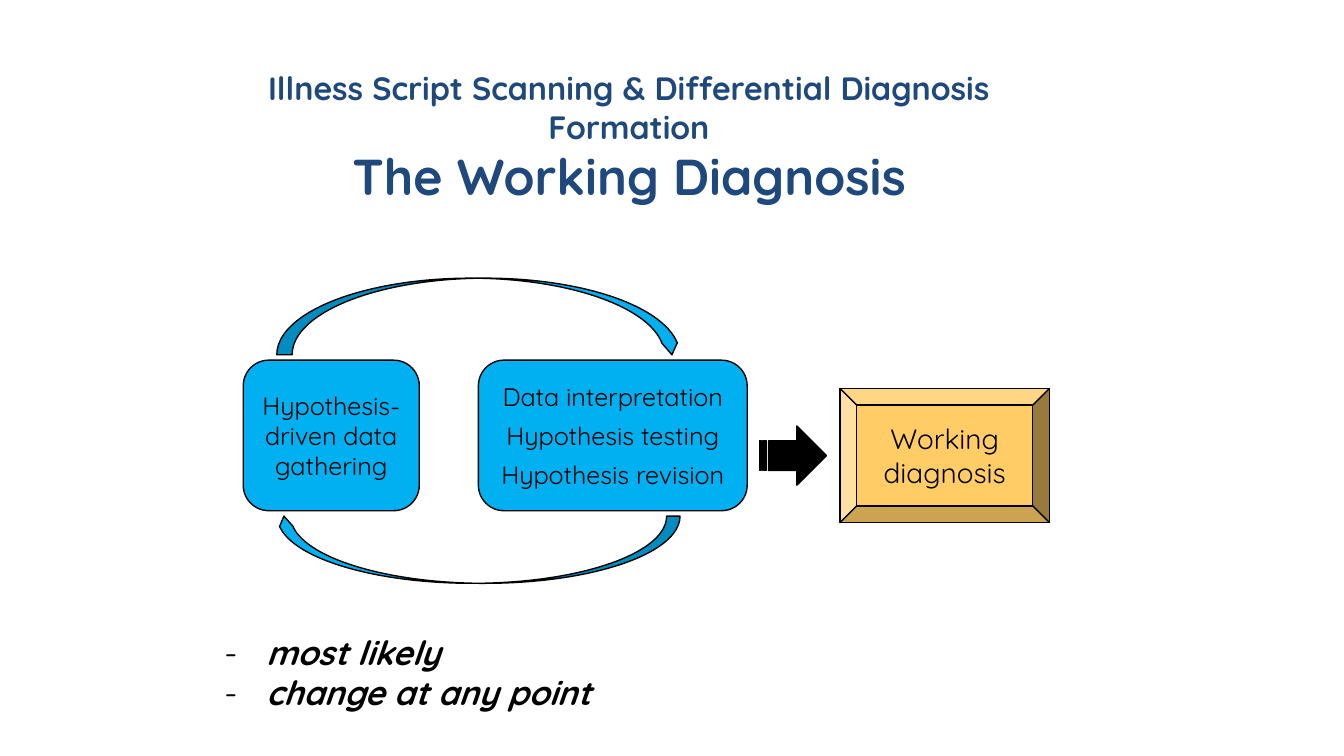
from pptx import Presentation, util as u
from pptx.dml.color import RGBColor
from pptx.enum import shapes, text
from pptx.oxml import parse_xml
from pptx.oxml.ns import nsdecls

FONT = "Quicksand"
BLACK, NAVY, BLUE, GOLD = "000000", "1F497D", "00B0F0", "FFCC66"
KIND = shapes.MSO_SHAPE
MID, TOP = text.MSO_ANCHOR.MIDDLE, text.MSO_ANCHOR.TOP


def color(code):
    return RGBColor.from_string(code)


def place(box):
    return [u.Inches(n) for n in box]


def style(run, size, code=BLACK, bold=False, italic=False):
    font = run.font
    font.name, font.size = FONT, u.Pt(size)
    font.bold, font.italic = bold, italic
    font.color.rgb = color(code)


def setup(frame, anchor):
    frame.word_wrap = True
    frame.vertical_anchor = anchor
    frame.margin_left = frame.margin_right = u.Inches(0.07)
    frame.margin_top = frame.margin_bottom = u.Inches(0.04)


def add_shape(slide, kind, box, fill, adjust=()):
    shape = slide.shapes.add_shape(kind, *place(box))
    shape.shadow.inherit = False
    shape.fill.solid()
    shape.fill.fore_color.rgb = color(fill)
    shape.line.color.rgb = color(BLACK)
    shape.line.width = u.Pt(0.75)
    for i, value in enumerate(adjust):
        shape.adjustments[i] = value
    return shape


def add_step(slide, kind, box, fill, lines, size, adjust):
    """Draw a filled step with one centred paragraph per line."""
    frame = add_shape(slide, kind, box, fill, [adjust]).text_frame
    setup(frame, MID)
    frame.text = "\n".join(lines)
    for i, para in enumerate(frame.paragraphs):
        para.alignment = text.PP_ALIGN.CENTER
        if i:
            para.space_before = u.Pt(4.5)
        style(para.runs[0], size)


def add_title(slide, box):
    frame = slide.shapes.add_textbox(*place(box)).text_frame
    setup(frame, MID)
    para = frame.paragraphs[0]
    para.text = ("Illness Script Scanning & Differential Diagnosis Formation"
                 "\vThe Working Diagnosis")
    para.alignment = text.PP_ALIGN.CENTER
    for run, size in zip(para.runs, (17.25, 27)):
        style(run, size, NAVY, bold=True)


def add_cycle(slide, box):
    """Draw two steps and the curved arrows that loop between them."""
    left, top, width, height = box
    loop = left + 0.25
    for y, tall, turn in ((top - 0.61, 0.57, 0), (top + height + 0.04, 0.5, 180)):
        arrow = add_shape(slide, KIND.CURVED_DOWN_ARROW, (loop, y, 3, tall),
                          BLUE, (0.2, 0.21, 0.16))
        arrow.rotation = turn
    steps = (
        (left, 1.31, ["Hypothesis-driven data gathering"]),
        (left + width - 2, 2, ["Data interpretation", "Hypothesis testing",
                               "Hypothesis revision"]),
    )
    for x, wide, lines in steps:
        add_step(slide, KIND.ROUNDED_RECTANGLE, (x, top, wide, height),
                 BLUE, lines, 13.5, 0.17)


def add_result(slide, box):
    """Draw the striped arrow and the bevelled result to its right."""
    left, top, width, height = box
    add_shape(slide, KIND.STRIPED_RIGHT_ARROW,
              (left, top + 0.28, 0.5, 0.44), BLACK)
    add_step(slide, KIND.BEVEL, (left + 0.6, top, width - 0.6, height),
             GOLD, ["Working diagnosis"], 15, 1 / 8)


def add_notes(slide, box, lines):
    """Write the dashed list below the cycle."""
    frame = slide.shapes.add_textbox(*place(box)).text_frame
    setup(frame, TOP)
    frame.text = "\n".join(lines)
    for para in frame.paragraphs:
        props = para._p.get_or_add_pPr()
        props.set("marL", str(u.Inches(0.38)))
        props.set("indent", str(u.Inches(-0.31)))
        for mark in (f'<a:buClr {nsdecls("a")}><a:srgbClr val="{BLACK}"/></a:buClr>',
                     f'<a:buFont {nsdecls("a")} typeface="{FONT}"/>',
                     f'<a:buChar {nsdecls("a")} char="-"/>'):
            props.append(parse_xml(mark))
        style(para.runs[0], 18, bold=True, italic=True)


def main():
    deck = Presentation()
    deck.slide_width = u.Inches(10)
    deck.slide_height = deck.slide_width * 9 // 16
    slide = deck.slides.add_slide(deck.slide_layouts[6])
    add_title(slide, (1.46, 0.58, 6.44, 0.88))
    add_cycle(slide, (1.81, 2.68, 3.75, 1.12))
    add_result(slide, (5.65, 2.89, 2.16, 1))
    add_notes(slide, (1.53, 4.66, 7.12, 0.57),
              ["most likely", "change at any point"])
    deck.save("out.pptx")


if __name__ == "__main__":
    main()
